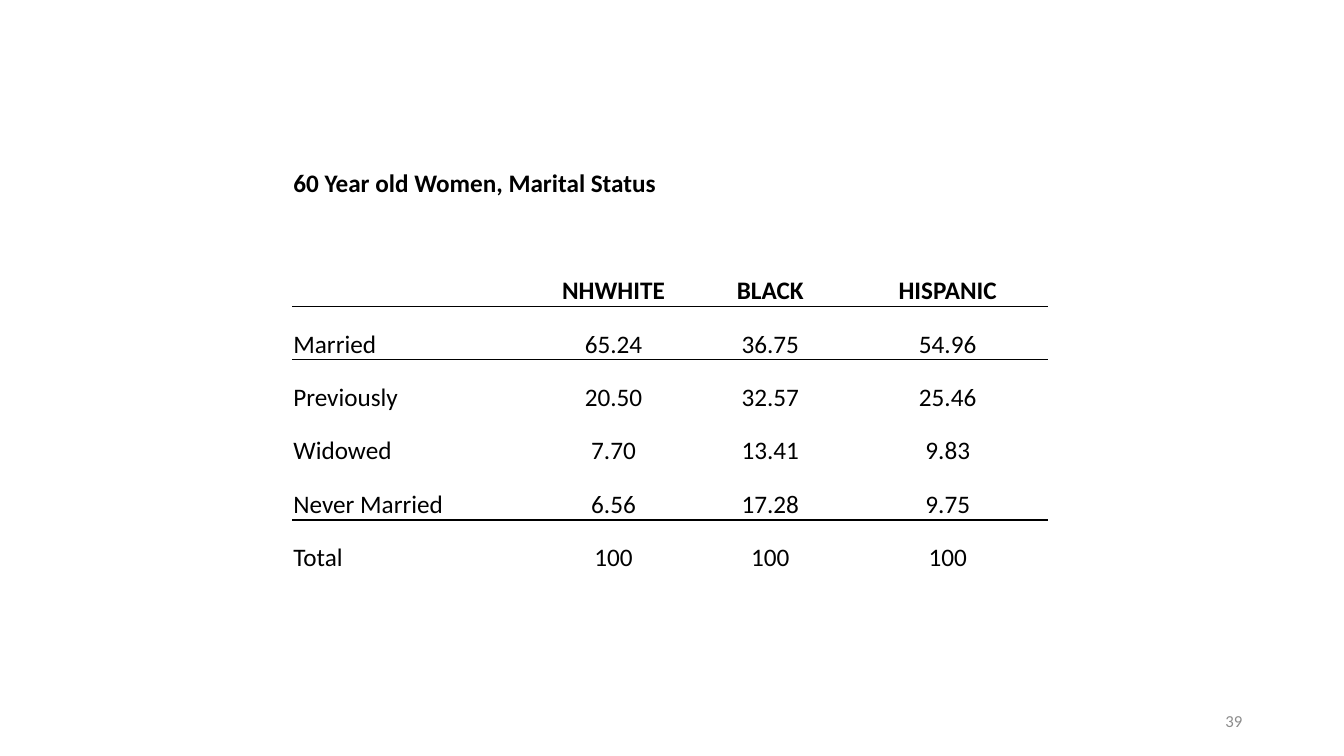
from dataclasses import dataclass

from lxml import etree
from pptx import Presentation
from pptx.dml.color import RGBColor
from pptx.enum.text import MSO_ANCHOR, PP_ALIGN
from pptx.oxml.ns import qn
from pptx.util import Inches, Pt

LEFT, CENTER, RIGHT = PP_ALIGN.LEFT, PP_ALIGN.CENTER, PP_ALIGN.RIGHT
MIDDLE, BOTTOM = MSO_ANCHOR.MIDDLE, MSO_ANCHOR.BOTTOM
PLAIN_TABLE_STYLE = "{2D5ABB26-0587-4C30-8999-92F81FD0307C}"


@dataclass(frozen=True)
class Theme:
    font: str = "Calibri"
    ink: str = "000000"
    muted: str = "8C8C8C"
    body_size: int = 18
    number_size: int = 12
    rule_width: int = 1


THEME = Theme()

HEADING = "60 Year old Women, Marital Status"
GROUPS = ["", "NHWHITE", "BLACK", "HISPANIC"]
STATUSES = [
    ["Married", "65.24", "36.75", "54.96"],
    ["Previously", "20.50", "32.57", "25.46"],
    ["Widowed", "7.70", "13.41", "9.83"],
    ["Never Married", "6.56", "17.28", "9.75"],
    ["Total", "100", "100", "100"],
]
COLUMN_WIDTHS = [2.4, 1.57, 1.54, 1.98]
HEADING_HEIGHT, ROW_HEIGHT = 0.88, 0.53
GROUP_ROW = 2
TOTAL_ROW = GROUP_ROW + len(STATUSES)
RULE_EDGES = {
    GROUP_ROW: "a:lnB",
    GROUP_ROW + 1: "a:lnT",
    TOTAL_ROW - 1: "a:lnB",
    TOTAL_ROW: "a:lnT",
}


def write(frame, text, size, color, align, bold=False):
    paragraph = frame.paragraphs[0]
    paragraph.alignment = align
    run = paragraph.add_run()
    run.text = text
    run.font.name = THEME.font
    run.font.size = Pt(size)
    run.font.bold = bold
    run.font.color.rgb = RGBColor.from_string(color)


def draw_rule(cell, edge):
    rule = etree.Element(qn(edge), w=str(Pt(THEME.rule_width)))
    fill = etree.SubElement(rule, qn("a:solidFill"))
    etree.SubElement(fill, qn("a:srgbClr"), val=THEME.ink)
    cell._tc.get_or_add_tcPr().insert(0, rule)


def fill_cell(cell, text, align, bold):
    cell.fill.background()
    cell.vertical_anchor = BOTTOM
    cell.margin_left = cell.margin_right = cell.margin_top = Inches(0.01)
    cell.margin_bottom = 0
    if text:
        write(cell.text_frame, text, THEME.body_size, THEME.ink, align, bold)


def add_status_table(slide, left, top, width, height):
    rows = [[HEADING, "", "", ""], [""] * len(GROUPS), GROUPS, *STATUSES]
    table = slide.shapes.add_table(
        len(rows), len(GROUPS), Inches(left), Inches(top), Inches(width), Inches(height)
    ).table
    table.first_row = table.horz_banding = False
    table._tbl.tblPr.find(qn("a:tableStyleId")).text = PLAIN_TABLE_STYLE
    for column, column_width in zip(table.columns, COLUMN_WIDTHS):
        column.width = Inches(column_width)
    for r, values in enumerate(rows):
        table.rows[r].height = Inches(ROW_HEIGHT if r else HEADING_HEIGHT)
        for c, value in enumerate(values):
            cell = table.cell(r, c)
            fill_cell(cell, value, CENTER if c else LEFT, r <= GROUP_ROW)
            if r in RULE_EDGES:
                draw_rule(cell, RULE_EDGES[r])
    table.cell(0, 0).merge(table.cell(0, 2))


def add_slide_number(slide, number, left, top, width, height):
    frame = slide.shapes.add_textbox(
        Inches(left), Inches(top), Inches(width), Inches(height)
    ).text_frame
    frame.word_wrap = True
    frame.vertical_anchor = MIDDLE
    write(frame, number, THEME.number_size, THEME.muted, RIGHT)


def main():
    deck = Presentation()
    deck.slide_width, deck.slide_height = Inches(13.33), Inches(7.5)
    slide = deck.slides.add_slide(deck.slide_layouts[6])
    add_slide_number(slide, "39", 9.42, 6.95, 3, 0.4)
    add_status_table(slide, 2.9, 1.1, 7.49, 4.59)
    deck.save("out.pptx")


if __name__ == "__main__":
    main()
